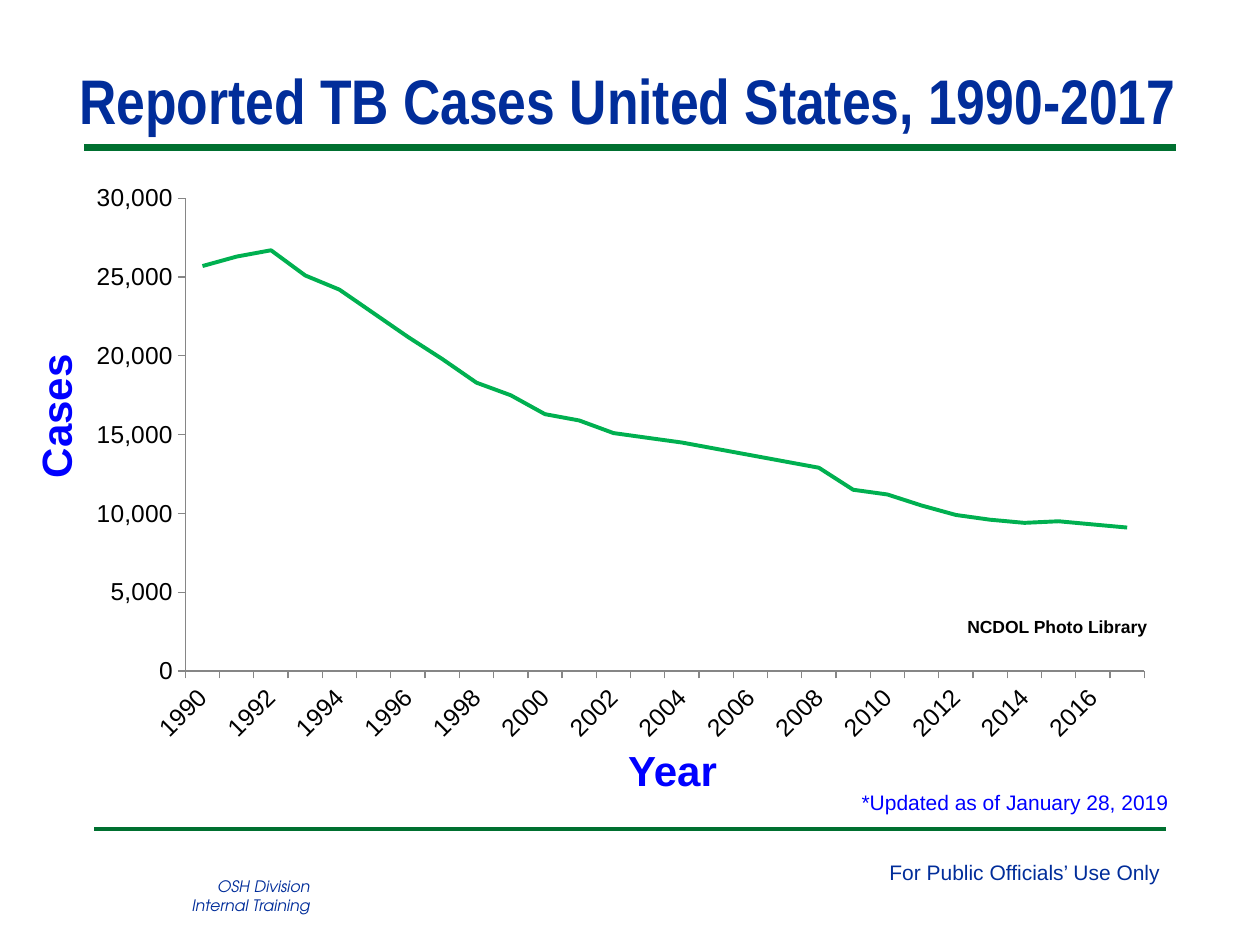
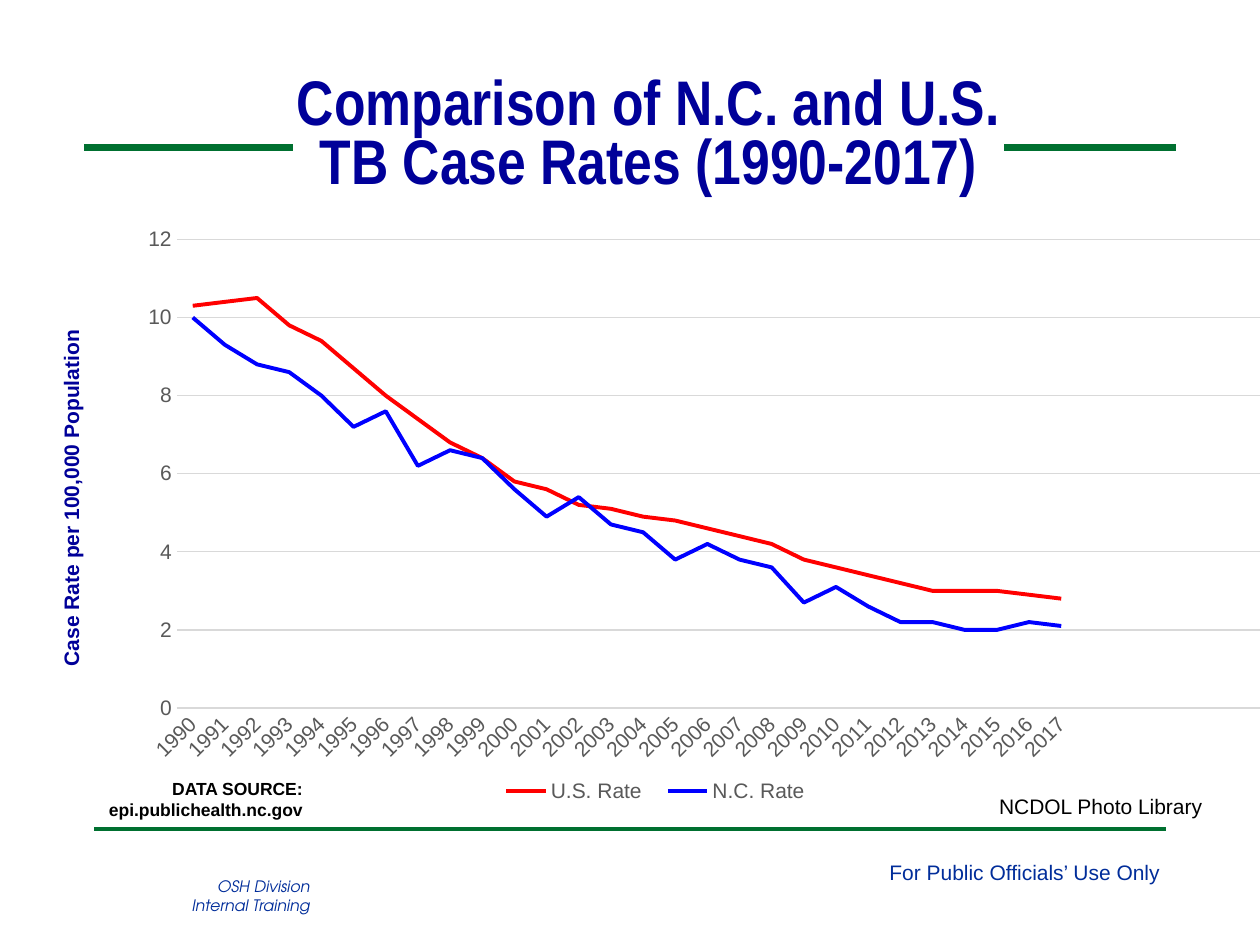
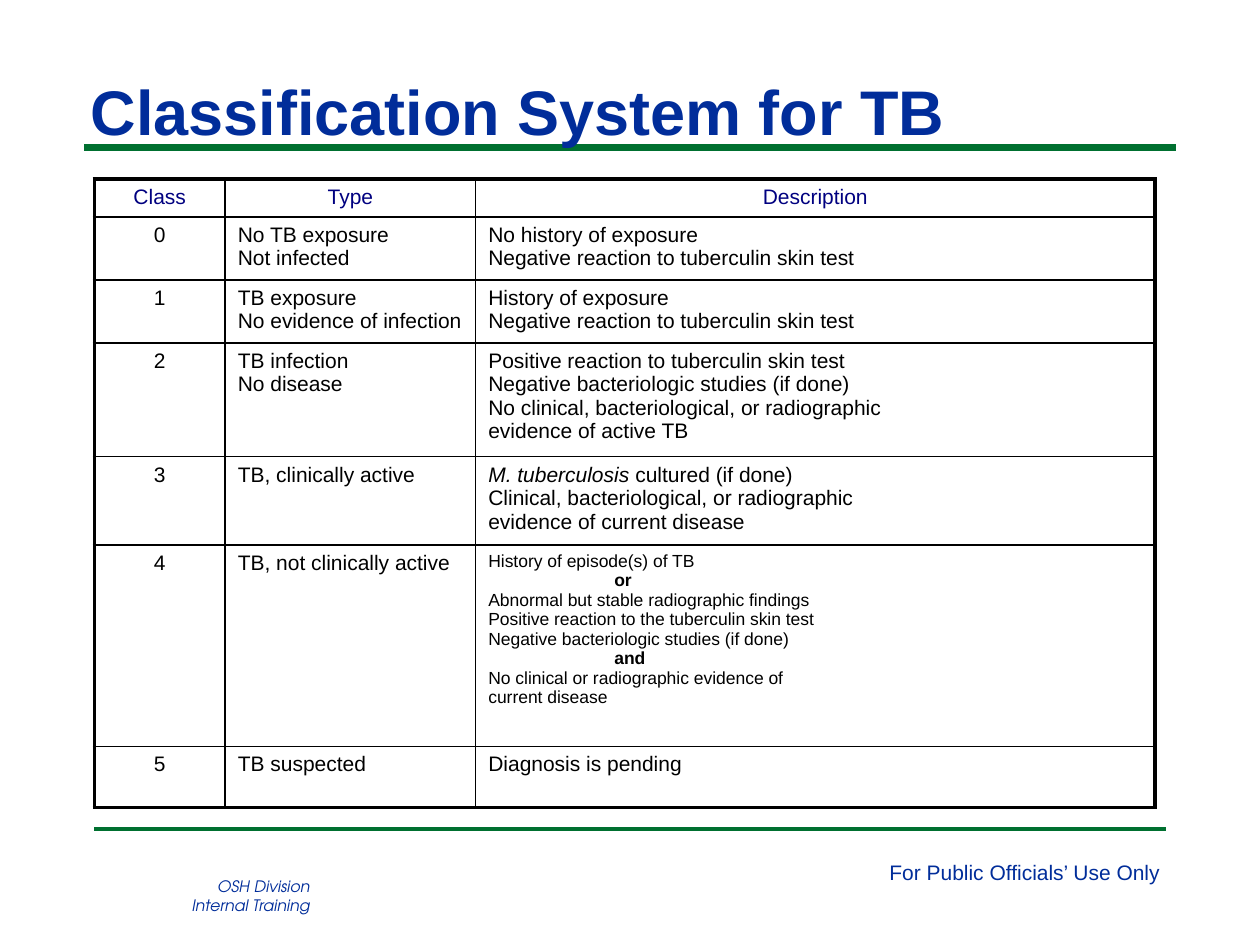
"""Build three training slides on tuberculosis figures and classes."""
from dataclasses import dataclass
from typing import Any, NamedTuple, Optional

from lxml import etree
from pptx import Presentation
from pptx import util as u
from pptx.chart import data
from pptx.dml import color
from pptx.enum import chart as charts, shapes, text
from pptx.oxml import ns

NAVY, GREEN, BLUE, BLACK = "012D9A", "007030", "0000FF", "000000"
DEEP_BLUE, GREY, PALE, AXIS_GREY = "000099", "595959", "D9D9D9", "868686"
LEFT, CENTER, RIGHT = text.PP_ALIGN.LEFT, text.PP_ALIGN.CENTER, text.PP_ALIGN.RIGHT
TOP, MIDDLE, BOTTOM = text.MSO_ANCHOR.TOP, text.MSO_ANCHOR.MIDDLE, text.MSO_ANCHOR.BOTTOM
THICK, THIN = 2.25, 1


class Frame(NamedTuple):
    left: float
    top: float
    width: float
    height: float


class Style(NamedTuple):
    size: float = 12
    tint: str = BLACK
    bold: bool = False
    italic: bool = False
    name: str = "Arial"


class Span(NamedTuple):
    words: str
    style: Style = Style()


class Line(NamedTuple):
    spans: tuple[Span, ...]
    indent: float = 0


@dataclass(frozen=True)
class Label:
    frame: Frame
    lines: tuple[str, ...]
    style: Style = Style()
    align: Any = LEFT
    anchor: Any = TOP
    wrap: bool = False
    margins: Optional[tuple[float, float]] = None
    vertical: bool = False
    rotation: float = 0


@dataclass(frozen=True)
class Rule:
    left: float
    right: float
    top: float
    weight: float


class Curve(NamedTuple):
    name: str
    values: tuple[float, ...]
    tint: str


@dataclass(frozen=True)
class Graph:
    frame: Frame
    plot: tuple[float, ...]
    curves: tuple[Curve, ...]
    style: Style
    axis_tint: str
    top_value: float
    step: float
    number_format: str
    spare: int = 0
    ticks: bool = False
    grid: bool = False
    title: tuple[str, ...] = ()


AXIS_TITLE = Style(24, BLUE, True)
NARROW = Style(36, NAVY, True, name="Arial Narrow")
TITLE_MARGINS = (0.13, 0)
YEARS = tuple(str(year) for year in range(1990, 2018))

RULES = (Rule(1.7, 23.7, 2.97, 4), Rule(1.9, 23.5, 16.71, 2))
FOOTERS = (
    Label(Frame(17.68, 17.2, 6.02, 0.76), ("For Public Officials’ Use Only",), Style(tint=NAVY)),
    Label(Frame(2.97, 17.55, 3.53, 1.24), ("OSH Division", "Internal Training"),
          Style(9, NAVY, italic=True, name="TeX Gyre Adventor"), RIGHT),
)

CASES_TITLE = Label(Frame(1.47, 1.22, 23.93, 1.55), ("Reported TB Cases United States, 1990-2017",),
                    NARROW, anchor=BOTTOM, wrap=True, margins=TITLE_MARGINS)
CASES_GRAPH = Graph(
    Frame(1.04, 3.51, 22.48, 12.22), (0.12, 0.04, 0.86, 0.78),
    (Curve("Series 1", (
        25700, 26300, 26700, 25100, 24200, 22700, 21200, 19800, 18300, 17500, 16300, 15900, 15100, 14800,
        14500, 14100, 13700, 13300, 12900, 11500, 11200, 10500, 9900, 9600, 9400, 9500, 9300, 9100), "00B050"),),
    Style(14), AXIS_GREY, 30000, 5000, "#,##0", ticks=True)
CASES_LABELS = (
    Label(Frame(17.12, 15.8, 7.82, 1.07), ("*Updated as of January 28, 2019",), Style(tint=BLUE), wrap=True),
    Label(Frame(12.78, 11.68, 1.55, 7.95), ("Year",), AXIS_TITLE, CENTER,
          wrap=True, vertical=True, rotation=90),
    Label(Frame(0.48, 4.42, 1.55, 7.95), ("Cases",), AXIS_TITLE, CENTER, wrap=True, vertical=True),
    Label(Frame(19.25, 12.29, 4.19, 0.69), ("NCDOL Photo Library",), Style(10, bold=True)),
)

RATES_GRAPH = Graph(
    Frame(0.43, 1.17, 26.09, 15.24), (0.12, 0.24, 0.87, 0.62),
    (Curve("U.S. Rate", (
        10.3, 10.4, 10.5, 9.8, 9.4, 8.7, 8, 7.4, 6.8, 6.4, 5.8, 5.6, 5.2, 5.1,
        4.9, 4.8, 4.6, 4.4, 4.2, 3.8, 3.6, 3.4, 3.2, 3, 3, 3, 2.9, 2.8), "FF0000"),
     Curve("N.C. Rate", (
         10, 9.3, 8.8, 8.6, 8, 7.2, 7.6, 6.2, 6.6, 6.4, 5.6, 4.9, 5.4, 4.7,
         4.5, 3.8, 4.2, 3.8, 3.6, 2.7, 3.1, 2.6, 2.2, 2.2, 2, 2, 2.2, 2.1), BLUE)),
    Style(tint=GREY), PALE, 12, 2, "General", spare=7, grid=True,
    title=("Comparison of N.C. and U.S.", "TB Case Rates (1990-2017)"))
RATES_LABELS = (
    Label(Frame(-0.64, 15.54, 6.99, 1.12), ("DATA SOURCE: epi.publichealth.nc.gov",),
          Style(10, bold=True), RIGHT, MIDDLE, wrap=True),
    Label(Frame(-2.24, 9.63, 7.34, 0.76), ("Case Rate per 100,000 Population",),
          Style(tint=DEEP_BLUE, bold=True), rotation=270),
    Label(Frame(19.89, 15.88, 4.65, 0.76), ("NCDOL Photo Library",)),
)

CLASSES_TITLE = Label(Frame(1.7, 1.47, 22.1, 1.52), ("Classification System for TB",),
                      Style(36, NAVY, True), anchor=BOTTOM, wrap=True, margins=TITLE_MARGINS)
COLUMN_WIDTHS = (2.64, 5.05, 13.69)
ROW_HEIGHTS = (0.76, 1.27, 1.27, 2.29, 1.78, 4.06, 1.24)
TABLE_FRAME = Frame(1.9, 3.61, sum(COLUMN_WIDTHS), sum(ROW_HEIGHTS))


def plain(*lines: str, style: Style = Style(), indent: float = 0) -> tuple[Line, ...]:
    """Make one single-span line from each string."""
    return tuple(Line((Span(words, style),), indent) for words in lines)


def small(*lines: str) -> tuple[Line, ...]:
    """Make lines in the small table size."""
    return plain(*lines, style=Style(10))


def joiner(word: str) -> tuple[Line, ...]:
    """Make an indented bold word that joins two conditions."""
    return plain(word, style=Style(10, bold=True), indent=2.54)


HEADINGS = tuple(plain(words, style=Style(tint="000080")) for words in ("Class", "Type", "Description"))
CLASSES = (
    (plain("No TB exposure", "Not infected"),
     plain("No history of exposure", "Negative reaction to tuberculin skin test")),
    (plain("TB exposure", "No evidence of infection"),
     plain("History of exposure", "Negative reaction to tuberculin skin test")),
    (plain("TB infection", "No disease"),
     plain("Positive reaction to tuberculin skin test", "Negative bacteriologic studies (if done)",
           "No clinical, bacteriological, or radiographic", "evidence of active TB")),
    (plain("TB, clinically active"),
     (Line((Span("M. tuberculosis", Style(italic=True)), Span(" cultured (if done)"))),
      *plain("Clinical, bacteriological, or radiographic", "evidence of current disease"))),
    (plain("TB, not clinically active"),
     small("History of episode(s) of TB") + joiner("or")
     + small("Abnormal but stable radiographic findings", "Positive reaction to the tuberculin skin test",
             "Negative bacteriologic studies (if done)") + joiner("and")
     + small("No clinical or radiographic evidence of", "current disease")),
    (plain("TB suspected"), plain("Diagnosis is pending")),
)


def rgb(code: str) -> color.RGBColor:
    """Turn a hex string into a colour."""
    return color.RGBColor.from_string(code)


def place(frame: Frame) -> list[u.Cm]:
    """Turn a frame into lengths."""
    return [u.Cm(value) for value in frame]


def set_font(font: Any, style: Style) -> None:
    """Apply a style to a font."""
    font.name, font.size = style.name, u.Pt(style.size)
    font.bold, font.italic = style.bold, style.italic
    font.color.rgb = rgb(style.tint)


def write(body: Any, lines: tuple[Line, ...], align: Any = LEFT) -> None:
    """Write lines into a text frame, one paragraph each."""
    for number, line in enumerate(lines):
        para = body.add_paragraph() if number else body.paragraphs[0]
        para.alignment = align
        if line.indent:
            para._p.get_or_add_pPr().set("marL", str(u.Cm(line.indent)))
        for words, style in line.spans:
            span = para.add_run()
            span.text = words
            set_font(span.font, style)


def add_label(page: Any, label: Label) -> None:
    """Draw a text box."""
    box = page.shapes.add_textbox(*place(label.frame))
    box.rotation = label.rotation
    body = box.text_frame
    body.word_wrap, body.vertical_anchor = label.wrap, label.anchor
    if not label.wrap:
        body.auto_size = text.MSO_AUTO_SIZE.SHAPE_TO_FIT_TEXT
    if label.margins:
        side, edge = label.margins
        body.margin_left = body.margin_right = u.Cm(side)
        body.margin_top = body.margin_bottom = u.Cm(edge)
    if label.vertical:
        body._txBody.bodyPr.set("vert", "vert270")
    write(body, plain(*label.lines, style=label.style), label.align)


def add_rule(page: Any, rule: Rule) -> None:
    """Draw a horizontal green rule."""
    line = page.shapes.add_connector(shapes.MSO_CONNECTOR.STRAIGHT, u.Cm(rule.left), u.Cm(rule.top),
                                     u.Cm(rule.right), u.Cm(rule.top))
    line.line.color.rgb, line.line.width = rgb(GREEN), u.Pt(rule.weight)
    etree.SubElement(line._element.spPr, ns.qn("a:effectLst"))


def add_page(deck: Any) -> Any:
    """Add a blank page with the shared rules and footers."""
    page = deck.slides.add_slide(deck.slide_layouts[6])
    for rule in RULES:
        add_rule(page, rule)
    for footer in FOOTERS:
        add_label(page, footer)
    return page


def set_layout(parent: Any, index: int, fractions: tuple[float, ...], inner: bool = False) -> None:
    """Fix a chart part at fractions of the chart area."""
    for old in parent.findall(ns.qn("c:layout")):
        parent.remove(old)
    layout = etree.Element(ns.qn("c:layout"))
    manual = etree.SubElement(layout, ns.qn("c:manualLayout"))
    settings = [("layoutTarget", "inner")] if inner else []
    settings += [("xMode", "edge"), ("yMode", "edge"), *zip("xywh", fractions)]
    for tag, value in settings:
        etree.SubElement(manual, ns.qn(f"c:{tag}")).set("val", str(value))
    parent.insert(index, layout)


def clear_background(chart: Any) -> None:
    """Make the chart area transparent."""
    area = etree.Element(ns.qn("c:spPr"))
    etree.SubElement(area, ns.qn("a:noFill"))
    etree.SubElement(etree.SubElement(area, ns.qn("a:ln")), ns.qn("a:noFill"))
    chart._chartSpace.find(ns.qn("c:chart")).addnext(area)


def style_axes(chart: Any, graph: Graph) -> None:
    """Set the scale, ticks, lines and labels of both axes."""
    mark = charts.XL_TICK_MARK.OUTSIDE if graph.ticks else charts.XL_TICK_MARK.NONE
    for axis in (chart.category_axis, chart.value_axis):
        axis.major_tick_mark, axis.minor_tick_mark = mark, charts.XL_TICK_MARK.NONE
        axis.format.line.color.rgb = rgb(graph.axis_tint)
        axis.format.line.width = u.Pt(0.75)
        set_font(axis.tick_labels.font, graph.style)
    chart.category_axis._element.txPr.bodyPr.set("rot", "-2700000")
    values = chart.value_axis
    values.minimum_scale, values.maximum_scale, values.major_unit = 0, graph.top_value, graph.step
    values.tick_labels.number_format = graph.number_format
    values.tick_labels.number_format_is_linked = False
    values.has_major_gridlines = graph.grid
    if graph.grid:
        values.format.line.fill.background()
        values.major_gridlines.format.line.color.rgb = rgb(PALE)
        values.major_gridlines.format.line.width = u.Pt(0.75)


def add_graph(page: Any, graph: Graph) -> None:
    """Draw a line chart."""
    table = data.CategoryChartData(number_format=graph.number_format)
    table.categories = YEARS + ("",) * graph.spare
    for curve in graph.curves:
        table.add_series(curve.name, curve.values + (None,) * graph.spare)
    chart = page.shapes.add_chart(charts.XL_CHART_TYPE.LINE, *place(graph.frame), table).chart
    set_font(chart.font, graph.style)
    clear_background(chart)
    chart.plots[0].vary_by_categories = False
    for series, curve in zip(chart.plots[0].series, graph.curves):
        series.smooth = False
        series.format.line.color.rgb, series.format.line.width = rgb(curve.tint), u.Pt(2.25)
    style_axes(chart, graph)
    set_layout(chart._chartSpace.chart.plotArea, 0, graph.plot, inner=True)
    chart.has_title = bool(graph.title)
    chart.has_legend = len(graph.curves) > 1
    if graph.title:
        title = chart.chart_title
        write(title.text_frame, plain(*graph.title, style=NARROW._replace(tint=DEEP_BLUE)), CENTER)
        title.format.fill.solid()
        title.format.fill.fore_color.rgb = rgb("FFFFFF")
        set_layout(title._element, 1, (0.21, 0.02))
    if chart.has_legend:
        chart.legend.position = charts.XL_LEGEND_POSITION.BOTTOM
        chart.legend.include_in_layout = False
        set_font(chart.legend.font, graph.style)
        set_layout(chart.legend._element, 1, (0.36, 0.94, 0.26, 0.06))


def add_borders(cell: Any, outer: dict[str, bool]) -> None:
    """Draw cell borders, thick along the outside of the table."""
    for side, is_outer in outer.items():
        border = etree.SubElement(cell._tc.get_or_add_tcPr(), ns.qn(f"a:ln{side}"))
        border.set("w", str(u.Pt(THICK if is_outer else THIN)))
        fill = etree.SubElement(border, ns.qn("a:solidFill"))
        etree.SubElement(fill, ns.qn("a:srgbClr")).set("val", BLACK)


def add_classes(page: Any) -> None:
    """Draw the table of classes."""
    rows = [HEADINGS] + [(plain(str(number)), *entry) for number, entry in enumerate(CLASSES)]
    last_row, last_column = len(ROW_HEIGHTS) - 1, len(COLUMN_WIDTHS) - 1
    table = page.shapes.add_table(len(rows), len(COLUMN_WIDTHS), *place(TABLE_FRAME)).table
    table.first_row = table.horz_banding = False
    for column, width in zip(table.columns, COLUMN_WIDTHS):
        column.width = u.Cm(width)
    for r, (row, height) in enumerate(zip(rows, ROW_HEIGHTS)):
        table.rows[r].height = u.Cm(height)
        for c, lines in enumerate(row):
            cell = table.cell(r, c)
            add_borders(cell, {"L": c == 0, "R": c == last_column, "T": r == 0, "B": r == last_row})
            cell.fill.background()
            write(cell.text_frame, lines, CENTER if r == 0 or c == 0 else LEFT)


def main() -> None:
    """Build and save the deck."""
    deck = Presentation()
    deck.slide_width, deck.slide_height = u.Cm(25.4), u.Cm(19.05)

    cases = add_page(deck)
    add_label(cases, CASES_TITLE)
    add_graph(cases, CASES_GRAPH)
    for label in CASES_LABELS:
        add_label(cases, label)

    rates = add_page(deck)
    add_graph(rates, RATES_GRAPH)
    for label in RATES_LABELS:
        add_label(rates, label)

    classes = add_page(deck)
    add_label(classes, CLASSES_TITLE)
    add_classes(classes)

    deck.save("out.pptx")


if __name__ == "__main__":
    main()
